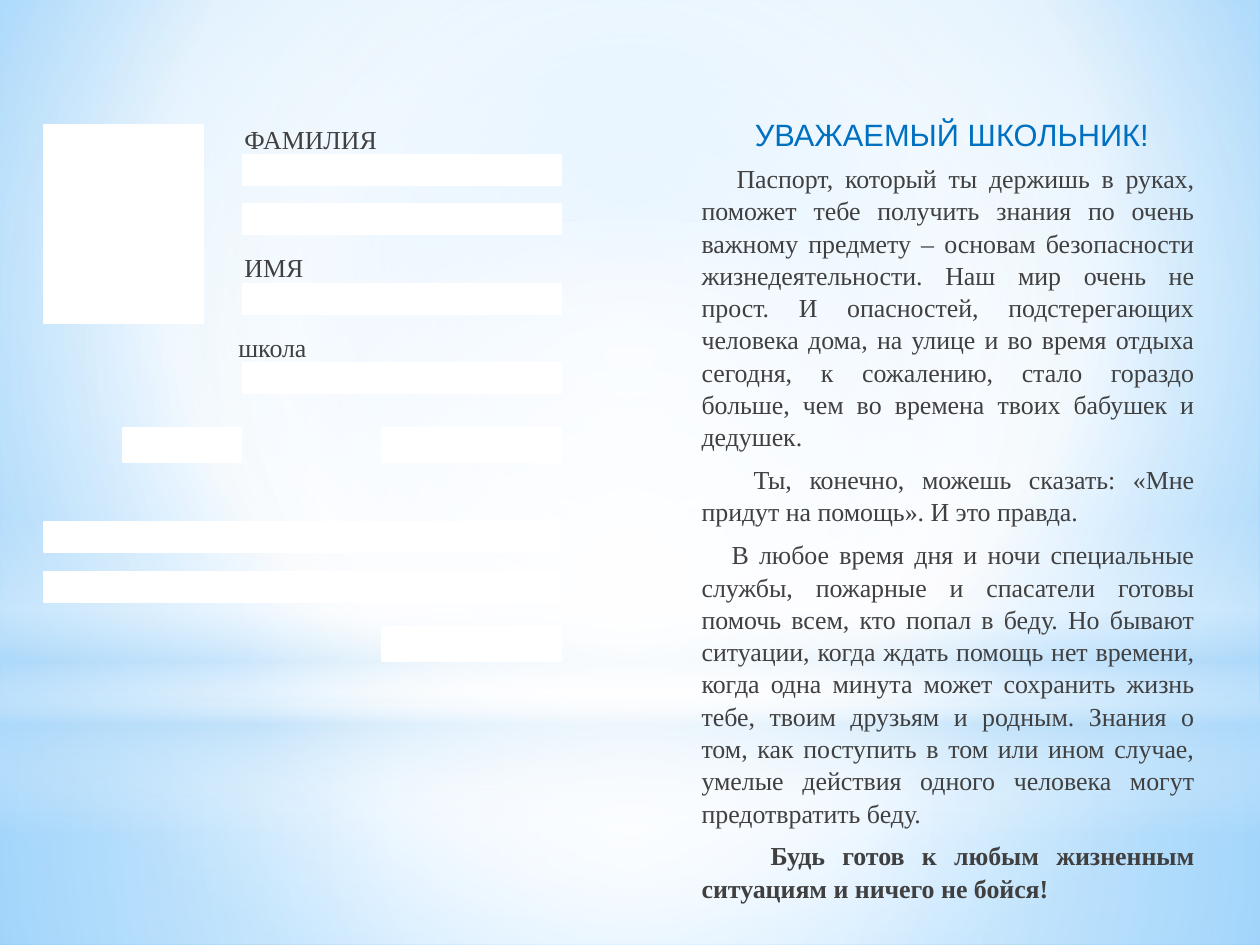
from dataclasses import dataclass

from lxml import etree
from pptx import Presentation
from pptx.dml.color import RGBColor
from pptx.enum.shapes import MSO_SHAPE
from pptx.enum.text import MSO_ANCHOR, MSO_AUTO_SIZE, PP_ALIGN
from pptx.oxml import parse_xml
from pptx.oxml.ns import nsdecls, qn
from pptx.util import Pt

RECT, OVAL = MSO_SHAPE.RECTANGLE, MSO_SHAPE.OVAL
LEFT, CENTER, JUSTIFY = PP_ALIGN.LEFT, PP_ALIGN.CENTER, PP_ALIGN.JUSTIFY
TOP, MIDDLE = MSO_ANCHOR.TOP, MSO_ANCHOR.MIDDLE
NO_AUTOFIT = MSO_AUTO_SIZE.NONE
EMU_PER_INCH, PX_PER_INCH = 914400, 126


@dataclass(frozen=True)
class Theme:
    white: str = "FFFFFF"
    haze: str = "B4DCFA"
    sky: str = "9ED5FF"
    deep_sky: str = "5BB9FF"
    text: str = "404040"
    accent: str = "0070C0"
    body_font: str = "Times New Roman"
    title_font: str = "Arial"
    body_size: float = 14.8
    title_size: float = 17.6
    border: float = 1.25
    gap: float = 3
    leading: float = 1.04


T = Theme()
CENTRE = (50, 50, 50, 50)

# Box, shape, gradient stops (position, colour, opacity), focus; no focus is a vertical fade
BACKDROP = [
    ((0, 703, 1260, 242), RECT,
     [(0, T.white, 91), (37, T.white, 76), (100, T.haze, 79)], CENTRE),
    ((0, 0, 1260, 703), RECT,
     [(0, T.white, 89), (48, T.white, 62), (100, T.haze, 79)], CENTRE),
    ((0, 519, 1260, 315), RECT,
     [(0, T.white, 0), (29, T.white, 30), (45, T.haze, 40),
      (55, T.white, 26), (65, T.haze, 60), (100, T.white, 0)], None),
    ((0, 220, 1260, 703), OVAL, [(0, T.white, 100), (56, T.white, 0)], CENTRE),
]
BACKGROUND_STOPS = [(0, T.sky, 100), (60, T.white, 100), (100, T.deep_sky, 100)]
BACKGROUND_FOCUS = (20, 10, 20, 60)

TITLE = "УВАЖАЕМЫЙ ШКОЛЬНИК!"
# First-line indent, text, bold
PARAGRAPHS = [
    (35, "Паспорт, который ты держишь в руках, поможет тебе получить знания по очень "
         "важному предмету – основам безопасности жизнедеятельности. Наш мир очень не "
         "прост. И опасностей, подстерегающих человека дома, на улице и во время отдыха "
         "сегодня, к сожалению, стало гораздо больше, чем во времена твоих бабушек и "
         "дедушек.", False),
    (52, "Ты, конечно, можешь сказать: «Мне придут на помощь». И это правда.", False),
    (30, "В любое время дня и ночи специальные службы, пожарные и спасатели готовы "
         "помочь всем, кто попал в беду. Но бывают ситуации, когда ждать помощь нет "
         "времени, когда одна минута может сохранить жизнь тебе, твоим друзьям и родным. "
         "Знания о том, как поступить в том или ином случае, умелые действия одного "
         "человека могут предотвратить беду.", False),
    (69, "Будь готов к любым жизненным ситуациям и ничего не бойся!", True),
]
# Top, indent, text
LABELS = [(116, 19, "ФАМИЛИЯ"), (244, 19, "ИМЯ"), (324, 13, "школа")]

PHOTO = (44, 125, 159, 198)
NAME_FIELDS = [(243, y, 318, 30) for y in (155, 204, 284, 363)]
WIDE_FIELDS = [(44, y, 515, 30) for y in (522, 572)]
SHORT_FIELDS = [(123, 428, 118, 34)] + [(382, y, 179, 34) for y in (428, 627)]


def px(n):
    return round(n * EMU_PER_INCH / PX_PER_INCH)


def gradient(stops, focus):
    """Return a gradFill: circular around focus, or top to bottom without one."""
    grad = etree.Element(qn("a:gradFill"), rotWithShape="1")
    stop_list = etree.SubElement(grad, qn("a:gsLst"))
    for position, color, opacity in stops:
        stop = etree.SubElement(stop_list, qn("a:gs"), pos=str(position * 1000))
        rgb = etree.SubElement(stop, qn("a:srgbClr"), val=color)
        if opacity < 100:
            etree.SubElement(rgb, qn("a:alpha"), val=str(opacity * 1000))
    if focus:
        circle = etree.SubElement(grad, qn("a:path"), {"path": "circle"})
        sides = {side: str(v * 1000) for side, v in zip("ltrb", focus)}
        etree.SubElement(circle, qn("a:fillToRect"), sides)
    else:
        etree.SubElement(grad, qn("a:lin"), ang="5400000", scaled="0")
    return parse_xml(etree.tostring(grad))


def add_shape(slide, kind, box):
    sp = slide.shapes.add_shape(kind, *map(px, box))
    sp.shadow.inherit = False
    return sp


def add_backdrop(master, slide):
    """Give the master its background and the translucent layers over it."""
    master.background.fill.solid()
    bg = master._element.find(".//" + qn("p:bgPr"))
    bg.replace(bg.find(qn("a:solidFill")), gradient(BACKGROUND_STOPS, BACKGROUND_FOCUS))
    first = master.shapes[0]._element
    for box, kind, stops, focus in BACKDROP:
        sp = add_shape(slide, kind, box)
        sp.line.fill.background()
        sp.fill.solid()
        props = sp._element.spPr
        props.replace(props.find(qn("a:solidFill")), gradient(stops, focus))
        first.addprevious(sp._element)


def add_field(slide, box):
    sp = add_shape(slide, RECT, box)
    sp.fill.solid()
    sp.fill.fore_color.rgb = RGBColor.from_string(T.white)
    sp.line.color.rgb = RGBColor.from_string(T.white)
    sp.line.width = Pt(T.border)


def place(sp, box):
    sp.left, sp.top, sp.width, sp.height = map(px, box)


def set_frame(tf, anchor):
    tf.word_wrap = True
    tf.auto_size = NO_AUTOFIT
    tf.vertical_anchor = anchor


def format_runs(p, font, size, color, bold=False):
    for r in p.runs:
        r.font.name = font
        r.font.size = Pt(size)
        r.font.bold = bold
        r.font.color.rgb = RGBColor.from_string(color)


def set_body_paragraph(p, text, indent, align, bold=False):
    p.text = text
    p.alignment = align
    p.space_before = p.space_after = Pt(T.gap)
    p.line_spacing = T.leading
    props = p._p.get_or_add_pPr()
    props.set("marL", "0")
    props.set("indent", str(px(indent)))
    props.append(parse_xml(f"<a:buNone {nsdecls('a')}/>"))
    format_runs(p, T.body_font, T.body_size, T.text, bold)


def set_title(sp):
    place(sp, (669, 86, 566, 97))
    tf = sp.text_frame
    tf.text = TITLE
    set_frame(tf, MIDDLE)
    p = tf.paragraphs[0]
    p.alignment = CENTER
    format_runs(p, T.title_font, T.title_size, T.accent)


def set_body(sp):
    place(sp, (689, 155, 518, 674))
    tf = sp.text_frame
    set_frame(tf, TOP)
    for i, (indent, text, bold) in enumerate(PARAGRAPHS):
        p = tf.add_paragraph() if i else tf.paragraphs[0]
        set_body_paragraph(p, text, indent, JUSTIFY, bold)


def add_label(slide, top, indent, text):
    tf = slide.shapes.add_textbox(*map(px, (213, top, 198, 39))).text_frame
    set_frame(tf, TOP)
    set_body_paragraph(tf.paragraphs[0], text, indent, LEFT)


def main():
    prs = Presentation()
    prs.slide_width, prs.slide_height = px(1260), px(945)
    slide = prs.slides.add_slide(prs.slide_layouts[1])
    add_backdrop(prs.slide_master, slide)
    set_title(slide.shapes.title)
    set_body(slide.placeholders[1])
    for box in [PHOTO] + NAME_FIELDS + WIDE_FIELDS + SHORT_FIELDS:
        add_field(slide, box)
    for top, indent, text in LABELS:
        add_label(slide, top, indent, text)
    prs.save("out.pptx")


if __name__ == "__main__":
    main()
